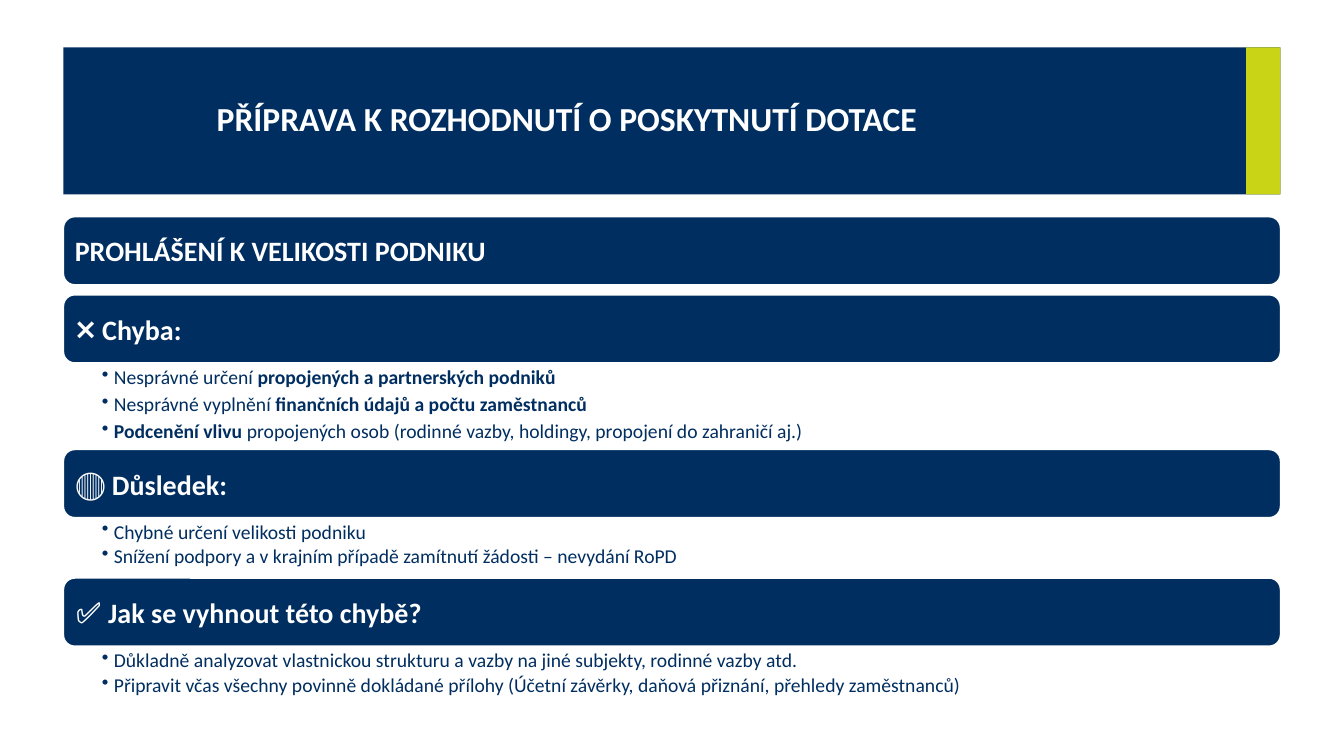
import dataclasses

import lxml.etree
import pptx
import pptx.dml.color
import pptx.enum.shapes
import pptx.enum.text
import pptx.oxml.ns
import pptx.util

PX = 4572  # EMU per px, 200 px to the inch
PAGE_WIDTH, PAGE_HEIGHT = 2666, 1500


def color(value):
    return pptx.dml.color.RGBColor.from_string(value)


@dataclasses.dataclass(frozen=True)
class Theme:
    navy = color("002E60")
    lime = color("C9D417")
    white = color("FFFFFF")
    font = "Calibri"
    title_size = 24
    heading_size = 20
    icon_size = 21
    bullet_size = 14


THEME = Theme()

BAR_HEIGHT = 135
# Icon, heading, height below the bar, and bullets as (line spacing, [(text, bold), ...])
SECTIONS = [
    ("", "PROHLÁŠENÍ K VELIKOSTI PODNIKU", 20, []),
    ("❌ ", "Chyba:", 172, [
        (1, [("Nesprávné určení ", False),
             ("propojených a partnerských podniků", True)]),
        (1, [("Nesprávné vyplnění ", False),
             ("finančních údajů a počtu zaměstnanců", True)]),
        (1, [("Podcenění vlivu ", True),
             ("propojených osob (rodinné vazby, holdingy, propojení do zahraničí aj.)", False)]),
    ]),
    ("🔴 ", "Důsledek:", 120, [
        (1, [("Chybné určení velikosti podniku", False)]),
        (0.9, [("Snížení podpory a v krajním případě zamítnutí žádosti – nevydání RoPD", False)]),
    ]),
    ("✅ ", "Jak se vyhnout této chybě?", 120, [
        (1, [("Důkladně analyzovat vlastnickou strukturu a vazby na jiné subjekty, "
              "rodinné vazby atd.", False)]),
        (0.9, [("Připravit včas všechny povinně dokládané přílohy (Účetní závěrky, "
                "daňová přiznání, přehledy zaměstnanců)", False)]),
    ]),
]


def emu(*lengths):
    return [length * PX for length in lengths]


def add_block(page, kind, box, fill, line=None):
    block = page.shapes.add_shape(kind, *emu(*box))
    block.shadow.inherit = False
    block.fill.solid()
    block.fill.fore_color.rgb = fill
    if line is None:
        block.line.fill.background()
    else:
        block.line.color.rgb = line
        block.line.width = pptx.util.Pt(1)
    return block


def set_frame(frame, insets, anchor):
    """Wrap the text and set its left, top, right and bottom insets."""
    frame.word_wrap = True
    frame.vertical_anchor = anchor
    (frame.margin_left, frame.margin_top,
     frame.margin_right, frame.margin_bottom) = emu(*insets)


def add_span(para, text, size, fill, bold):
    span = para.add_run()
    span.text = text
    span.font.name = THEME.font
    span.font.size = pptx.util.Pt(size)
    span.font.bold = bold
    span.font.color.rgb = fill


def add_bullet(para):
    properties = para._p.get_or_add_pPr()
    properties.set("marL", str(24 * PX))
    properties.set("indent", str(-24 * PX))
    bullet = lxml.etree.SubElement(properties, pptx.oxml.ns.qn("a:buChar"))
    bullet.set("char", "•")


def add_title(page, box, text):
    left, top, width, height = box
    accent_width = 68
    rectangle = pptx.enum.shapes.MSO_SHAPE.RECTANGLE
    add_block(page, rectangle, box, THEME.navy)
    add_block(page, rectangle, (left + width - accent_width, top, accent_width, height), THEME.lime)
    title = page.shapes.add_textbox(*emu(left + 304, top, 1992, height))
    set_frame(title.text_frame, (0, 0, 0, 0), pptx.enum.text.MSO_ANCHOR.MIDDLE)
    para = title.text_frame.paragraphs[0]
    para.line_spacing = 0.9
    add_span(para, text, THEME.title_size, THEME.white, True)


def add_heading_bar(page, box, icon, heading):
    bar = add_block(page, pptx.enum.shapes.MSO_SHAPE.ROUNDED_RECTANGLE, box,
                    THEME.navy, THEME.white)
    inset = 18 if icon else 16
    set_frame(bar.text_frame, [inset] * 4, pptx.enum.text.MSO_ANCHOR.MIDDLE)
    para = bar.text_frame.paragraphs[0]
    para.alignment = pptx.enum.text.PP_ALIGN.LEFT
    if icon:
        add_span(para, icon, THEME.icon_size, THEME.white, True)
    add_span(para, heading, THEME.heading_size, THEME.white, True)


def add_bullets(page, box, bullets):
    frame = page.shapes.add_textbox(*emu(*box)).text_frame
    set_frame(frame, (76, 4, 22, 4), pptx.enum.text.MSO_ANCHOR.TOP)
    for index, (spacing, spans) in enumerate(bullets):
        para = frame.add_paragraph() if index else frame.paragraphs[0]
        add_bullet(para)
        para.line_spacing = spacing
        para.space_after = pptx.util.Pt(2.5)
        for text, bold in spans:
            add_span(para, text, THEME.bullet_size, THEME.navy, bold)


def add_sections(page, left, top, width):
    """Stack the heading bars, each followed by its bullets or a gap."""
    for icon, heading, body_height, bullets in SECTIONS:
        add_heading_bar(page, (left, top, width, BAR_HEIGHT), icon, heading)
        top += BAR_HEIGHT
        if bullets:
            add_bullets(page, (left, top, width, body_height), bullets)
        top += body_height


def main():
    deck = pptx.Presentation()
    deck.slide_width, deck.slide_height = emu(PAGE_WIDTH, PAGE_HEIGHT)
    page = deck.slides.add_slide(deck.slide_layouts[6])
    left, width = 126, 2414
    add_title(page, (left, 94, width, 292), "PŘÍPRAVA K ROZHODNUTÍ O POSKYTNUTÍ DOTACE")
    add_sections(page, left, 430, width)
    deck.save("out.pptx")


if __name__ == "__main__":
    main()
